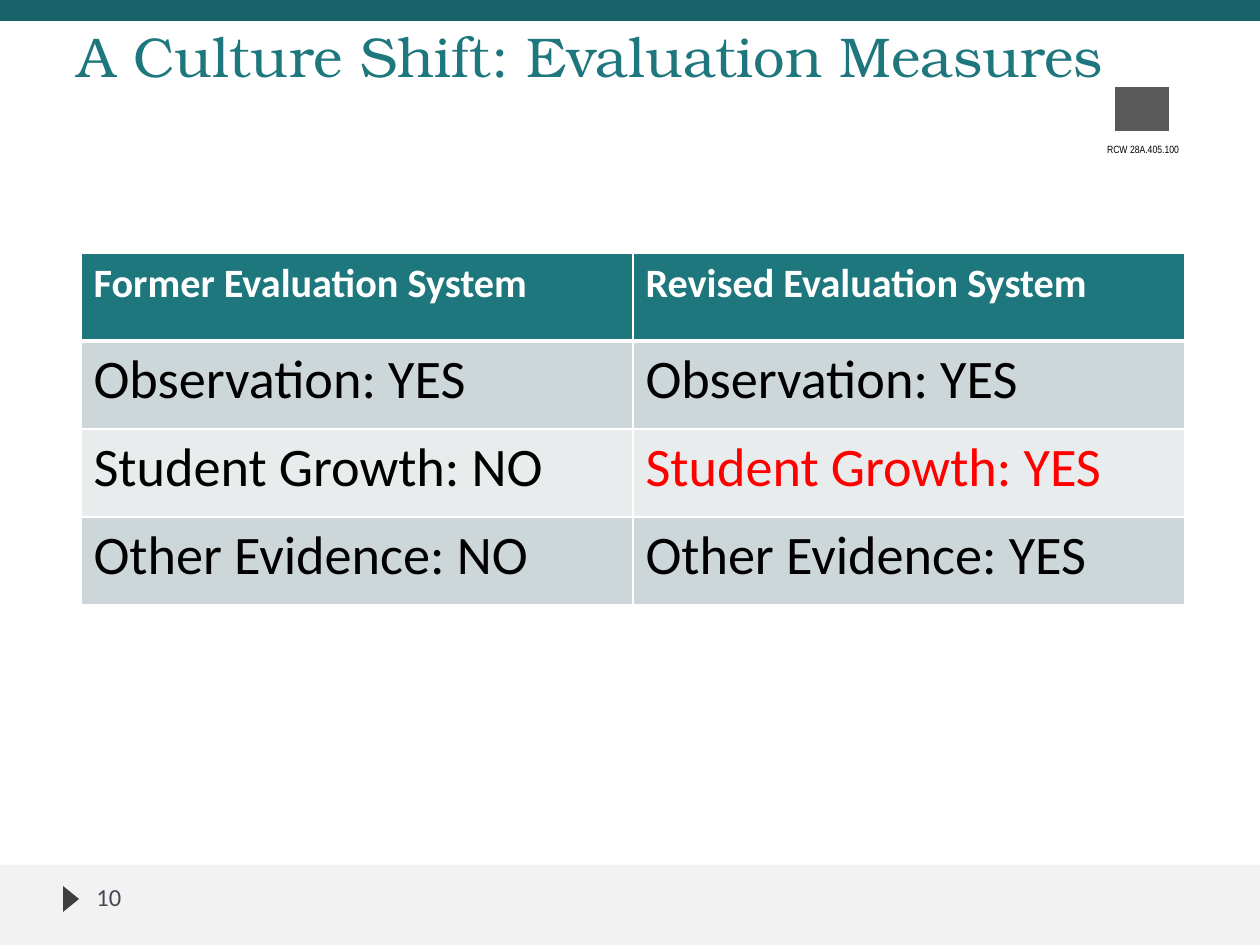
from dataclasses import dataclass

from lxml.etree import SubElement
from pptx import Presentation
from pptx.dml.color import RGBColor
from pptx.enum.shapes import MSO_SHAPE as Shape
from pptx.enum.text import MSO_ANCHOR as Anchor, PP_ALIGN as Align
from pptx.oxml.ns import qn
from pptx.util import Emu, Pt

PX_PER_INCH = 126

TEAL = RGBColor(0x1F, 0x77, 0x7E)
DARK_TEAL = RGBColor(0x19, 0x64, 0x6B)
PALE_GRAY = RGBColor(0xF2, 0xF2, 0xF2)
ARROW_GRAY = RGBColor(0x3F, 0x3F, 0x3F)
BLOCK_GRAY = RGBColor(0x59, 0x59, 0x59)
NUMBER_GRAY = RGBColor(0x46, 0x46, 0x53)
BAND_DARK = RGBColor(0xCD, 0xD6, 0xD8)
BAND_LIGHT = RGBColor(0xE8, 0xEC, 0xEC)
WHITE = RGBColor(0xFF, 0xFF, 0xFF)
BLACK = RGBColor(0, 0, 0)
RED = RGBColor(0xFF, 0, 0)


@dataclass(frozen=True)
class Box:
    x: int
    y: int
    w: int
    h: int

    def emu(self) -> tuple:
        return tuple(px(n) for n in (self.x, self.y, self.w, self.h))


@dataclass(frozen=True)
class Style:
    font: str
    size: int
    color: RGBColor
    bold: bool = False


@dataclass(frozen=True)
class Line:
    text: str
    style: Style


@dataclass(frozen=True)
class Decoration:
    kind: Shape
    box: Box
    color: RGBColor
    rotation: int = 0


TITLE = Style("TeX Gyre Bonum", 32, TEAL)
NUMBER = Style("Calibri", 14, NUMBER_GRAY)
CITATION = Style("Arial Narrow", 6, BLACK)
HEADER = Style("Calibri", 23, WHITE, True)
BODY = Style("Calibri", 31, BLACK)
CHANGED = Style("Calibri", 31, RED)

# Footer band, top bar, page arrow and the block above the law reference
DECORATIONS = (
    Decoration(Shape.RECTANGLE, Box(0, 865, 1260, 80), PALE_GRAY),
    Decoration(Shape.RECTANGLE, Box(0, 0, 1260, 21), DARK_TEAL),
    Decoration(Shape.ISOSCELES_TRIANGLE, Box(58, 891, 26, 16), ARROW_GRAY, 90),
    Decoration(Shape.RECTANGLE, Box(1115, 87, 54, 44), BLOCK_GRAY),
)

ROWS = (
    (Line("Former Evaluation System", HEADER), Line("Revised Evaluation System", HEADER)),
    (Line("Observation: YES", BODY), Line("Observation: YES", BODY)),
    (Line("Student Growth: NO", BODY), Line("Student Growth: YES", CHANGED)),
    (Line("Other Evidence: NO", BODY), Line("Other Evidence: YES", BODY)),
)
ROW_FILLS = (TEAL, BAND_DARK, BAND_LIGHT, BAND_DARK)


def px(n: int) -> Emu:
    return Emu(round(n * 914400 / PX_PER_INCH))


def write(p, line: Line) -> None:
    p.text = line.text
    font = p.runs[0].font
    font.name = line.style.font
    font.size = Pt(line.style.size)
    font.bold = line.style.bold
    font.color.rgb = line.style.color


def add_decoration(s, item: Decoration) -> None:
    sp = s.shapes.add_shape(item.kind, *item.box.emu())
    sp.rotation = item.rotation
    sp.shadow.inherit = False
    sp.fill.solid()
    sp.fill.fore_color.rgb = item.color
    sp.line.fill.background()


def add_text(s, box: Box, line: Line, align: Align = Align.LEFT,
             anchor: Anchor = Anchor.TOP):
    tf = s.shapes.add_textbox(*box.emu()).text_frame
    tf.word_wrap = True
    tf.vertical_anchor = anchor
    p = tf.paragraphs[0]
    write(p, line)
    p.alignment = align
    return tf


def set_borders(cell, bottom: int, top: int) -> None:
    tc_pr = cell._tc.get_or_add_tcPr()
    widths = {"a:lnL": 1, "a:lnR": 1, "a:lnT": top, "a:lnB": bottom}
    for tag, width in widths.items():
        ln = SubElement(tc_pr, qn(tag), w=str(Pt(width)))
        fill = SubElement(ln, qn("a:solidFill"))
        SubElement(fill, qn("a:srgbClr"), val=str(WHITE))


def add_comparison(s, box: Box) -> None:
    n_rows, n_cols = len(ROWS), len(ROWS[0])
    table = s.shapes.add_table(n_rows, n_cols, *box.emu()).table
    for col in table.columns:
        col.width = px(box.w // n_cols)
    for i, (row, fill) in enumerate(zip(ROWS, ROW_FILLS)):
        table.rows[i].height = px(box.h // n_rows)
        for j, line in enumerate(row):
            cell = table.cell(i, j)
            write(cell.text_frame.paragraphs[0], line)
            # Borders come before the fill in the cell properties
            set_borders(cell, bottom=3 if i == 0 else 1, top=3 if i == 1 else 1)
            cell.fill.solid()
            cell.fill.fore_color.rgb = fill


def main() -> None:
    prs = Presentation()
    prs.slide_width, prs.slide_height = px(1260), px(945)
    s = prs.slides.add_slide(prs.slide_layouts[6])

    # Plain shapes and page number
    for item in DECORATIONS:
        add_decoration(s, item)
    add_text(s, Box(84, 872, 273, 50), Line("10", NUMBER), anchor=Anchor.MIDDLE)

    # Title
    tf = add_text(s, Box(65, 22, 1137, 134),
                  Line("A Culture Shift: Evaluation Measures", TITLE))
    tf.margin_top = 0

    # Comparison table
    add_comparison(s, Box(81, 253, 1104, 352))

    # Law reference
    add_text(s, Box(1085, 137, 116, 25), Line("RCW 28A.405.100", CITATION),
             align=Align.CENTER)

    prs.save("out.pptx")


if __name__ == "__main__":
    main()
